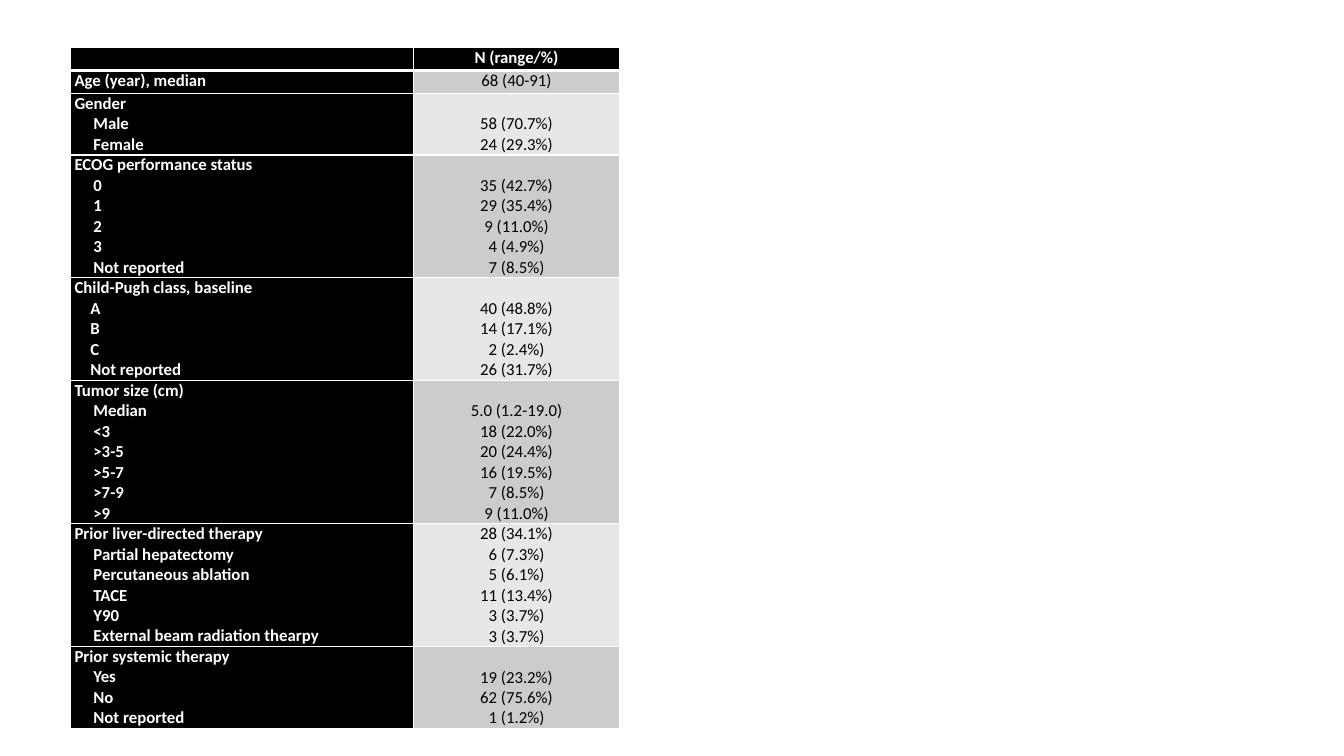
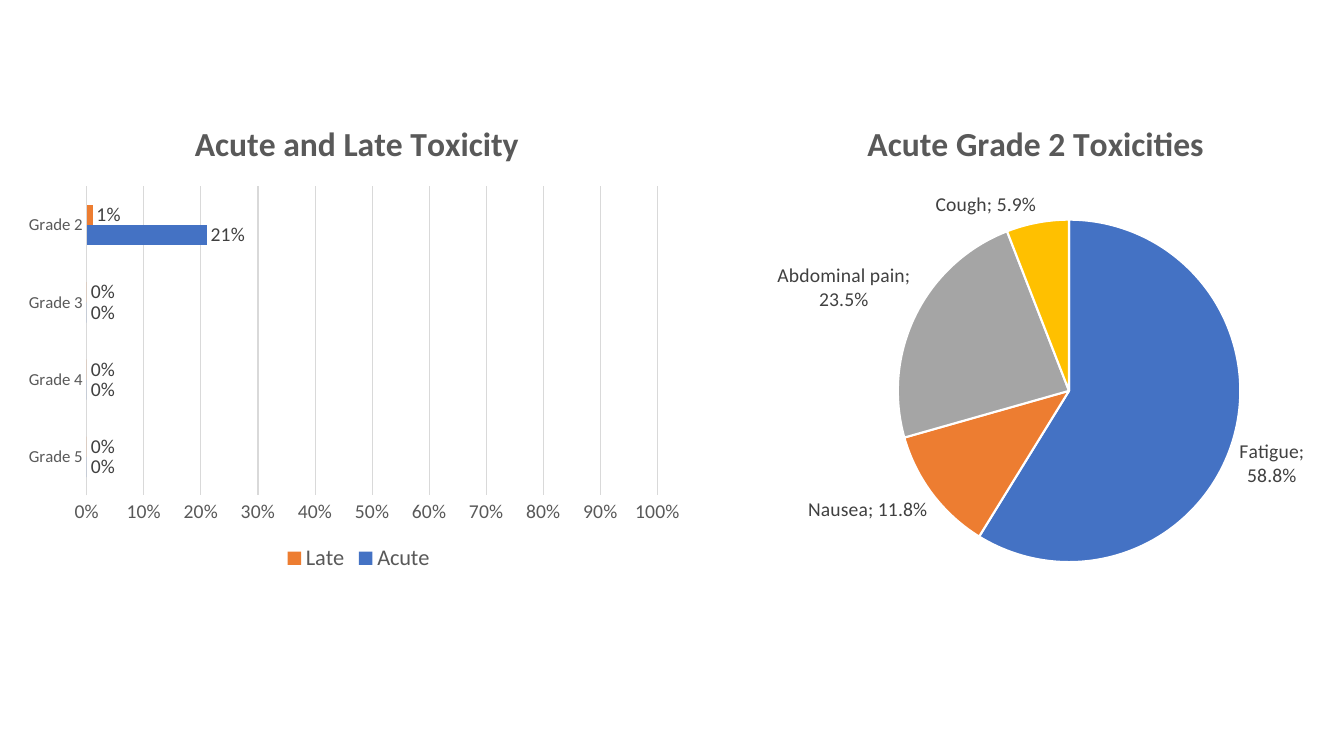
from pptx import Presentation
from pptx import util as u
from pptx.chart.data import CategoryChartData
from pptx.dml.color import RGBColor
from pptx.enum import chart as ch
from pptx.enum import text
from pptx.oxml import parse_xml
from pptx.oxml.ns import nsdecls

FONT = "Calibri"
BLACK, WHITE = "000000", "FFFFFF"
BANDS = ["CCCCCC", "E7E7E7"]
GREY, DARK_GREY, GRID = "595959", "404040", "D9D9D9"
BLUE, ORANGE, SILVER, GOLD = "4472C4", "ED7D31", "A5A5A5", "FFC000"

LINE_HEIGHT = 19.5  # px taken by one 12 pt line
MIN_ROW = 22
INDENT, SMALL_INDENT = 18, 15

# Heading, its value, indent of the sub-rows, sub-rows with their values
PATIENT_GROUPS = [
    ("Age (year), median", "68 (40-91)", 0, []),
    ("Gender", "", INDENT, [("Male", "58 (70.7%)"), ("Female", "24 (29.3%)")]),
    ("ECOG performance status", "", INDENT, [
        ("0", "35 (42.7%)"), ("1", "29 (35.4%)"), ("2", "9 (11.0%)"),
        ("3", "4 (4.9%)"), ("Not reported", "7 (8.5%)")]),
    ("Child-Pugh class, baseline", "", SMALL_INDENT, [
        ("A", "40 (48.8%)"), ("B", "14 (17.1%)"), ("C", "2 (2.4%)"),
        ("Not reported", "26 (31.7%)")]),
    ("Tumor size (cm)", "", INDENT, [
        ("Median", "5.0 (1.2-19.0)"), ("<3", "18 (22.0%)"),
        (">3-5", "20 (24.4%)"), (">5-7", "16 (19.5%)"),
        (">7-9", "7 (8.5%)"), (">9", "9 (11.0%)")]),
    ("Prior liver-directed therapy", "28 (34.1%)", INDENT, [
        ("Partial hepatectomy", "6 (7.3%)"),
        ("Percutaneous ablation", "5 (6.1%)"), ("TACE", "11 (13.4%)"),
        ("Y90", "3 (3.7%)"), ("External beam radiation thearpy", "3 (3.7%)")]),
    ("Prior systemic therapy", "", INDENT, [
        ("Yes", "19 (23.2%)"), ("No", "62 (75.6%)"),
        ("Not reported", "1 (1.2%)")]),
]


def px(length):
    return u.Emu(round(length * 9525))


def rgb(hex_color):
    return RGBColor.from_string(hex_color)


def style_font(font, size, color, bold=False):
    font.name, font.size, font.bold = FONT, u.Pt(size), bold
    font.color.rgb = rgb(color)


def style_line(line, color, width):
    line.color.rgb = rgb(color)
    line.width = u.Pt(width)


def write_lines(frame, lines, size, color, bold=False):
    for number, line in enumerate(lines):
        paragraph = frame.add_paragraph() if number else frame.paragraphs[0]
        run = paragraph.add_run()
        run.text = line
        style_font(run.font, size, color, bold)


# Table parts

def add_borders(cell, bottom):
    properties = cell._tc.get_or_add_tcPr()
    for side, width in (("L", 1), ("R", 1), ("T", 1), ("B", bottom)):
        properties.append(parse_xml(
            f'<a:ln{side} {nsdecls("a")} w="{u.Pt(width)}"><a:solidFill>'
            f'<a:srgbClr val="{WHITE}"/></a:solidFill></a:ln{side}>'))


def fill_cell(cell, lines, fill, color, bold, centred=False, indent=0, bottom=1):
    add_borders(cell, bottom)
    cell.fill.solid()
    cell.fill.fore_color.rgb = rgb(fill)
    cell.margin_left = cell.margin_right = px(4)
    cell.margin_top = cell.margin_bottom = 0
    write_lines(cell.text_frame, lines, 12, color, bold)
    paragraphs = cell.text_frame.paragraphs
    for paragraph in paragraphs:
        paragraph.alignment = text.PP_ALIGN.CENTER if centred else text.PP_ALIGN.LEFT
    if indent:
        for paragraph in paragraphs[1:]:
            paragraph._p.get_or_add_pPr().set("marL", str(px(indent)))
    if not lines:  # keeps the empty cell as low as its row
        paragraphs[0]._p.append(
            parse_xml(f'<a:endParaRPr {nsdecls("a")} sz="1200"/>'))


def add_patient_table(slide):
    heights = [MIN_ROW] + [max(MIN_ROW, LINE_HEIGHT * (1 + len(group[3])))
                           for group in PATIENT_GROUPS]
    widths = [327, 196]
    table = slide.shapes.add_table(
        len(heights), 2, px(67), px(45), px(sum(widths)), px(sum(heights))).table
    table.horz_banding = False
    for column, width in zip(table.columns, widths):
        column.width = px(width)
    for row, height in zip(table.rows, heights):
        row.height = px(height)

    fill_cell(table.cell(0, 0), [], BLACK, WHITE, True, bottom=3)
    fill_cell(table.cell(0, 1), ["N (range/%)"], BLACK, WHITE, True, True, bottom=3)
    for number, (heading, total, indent, details) in enumerate(PATIENT_GROUPS):
        labels = [heading] + [label for label, _ in details]
        values = [total] * bool(total) + [value for _, value in details]
        label_cell, value_cell = table.rows[number + 1].cells
        fill_cell(label_cell, labels, BLACK, WHITE, True, indent=indent)
        fill_cell(value_cell, values, BANDS[number % 2], BLACK, False, True)
        if details:  # values line up with the sub-rows
            value_cell.vertical_anchor = text.MSO_ANCHOR.BOTTOM


# Chart parts

def set_layout(part, index, target="", **fractions):
    for old in part.xpath("c:layout"):
        part.remove(old)
    inner = f'<c:layoutTarget val="{target}"/>' if target else ""
    modes = "".join(f'<c:{key}Mode val="edge"/>' for key in "xy")
    sizes = "".join(f'<c:{key} val="{value}"/>' for key, value in fractions.items())
    part.insert(index, parse_xml(
        f'<c:layout {nsdecls("c")}><c:manualLayout>{inner}{modes}{sizes}'
        '</c:manualLayout></c:layout>'))


def add_chart(slide, kind, box, title, title_left, plot_box, categories, series):
    data = CategoryChartData()
    data.categories = categories
    for name, values in series:
        data.add_series(name, values)
    chart = slide.shapes.add_chart(kind, *map(px, box), data).chart
    style_font(chart.font, 10, BLACK)
    chart.has_title = True
    write_lines(chart.chart_title.text_frame, [title], 24, GREY, True)
    set_layout(chart.element.xpath("c:chart/c:title")[0], 1, x=title_left, y=0.03)
    set_layout(chart.element.xpath("c:chart/c:plotArea")[0], 0, "inner",
               **dict(zip("xywh", plot_box)))
    chart.has_legend = False
    return chart


def label_series(series, number_format, with_category=False):
    labels = series.data_labels
    style_font(labels.font, 14, DARK_GREY)
    labels.number_format = number_format
    labels.number_format_is_linked = False
    labels.show_value = True
    labels.show_category_name = with_category
    labels.position = ch.XL_LABEL_POSITION.OUTSIDE_END


def style_axis(axis, size):
    style_font(axis.tick_labels.font, size, GREY)
    axis.major_tick_mark = axis.minor_tick_mark = ch.XL_TICK_MARK.NONE


def add_toxicity_bars(slide):
    chart = add_chart(
        slide, ch.XL_CHART_TYPE.BAR_CLUSTERED, (18, 96, 647, 453),
        "Acute and Late Toxicity", 0.25, (0.1, 0.18, 0.84, 0.65),
        ["Grade 5", "Grade 4", "Grade 3", "Grade 2"],
        [("Acute", (0, 0, 0, 0.21)), ("Late", (0, 0, 0, 0.01))])
    bars = chart.plots[0]
    bars.gap_width, bars.overlap = 182, 0
    bars.vary_by_categories = False
    for series, color in zip(bars.series, (BLUE, ORANGE)):
        series.format.fill.solid()
        series.format.fill.fore_color.rgb = rgb(color)
        label_series(series, "0%")

    grades, share = chart.category_axis, chart.value_axis
    style_axis(grades, 12)
    style_line(grades.format.line, GRID, 0.75)
    style_axis(share, 14)
    share.format.line.fill.background()
    share.minimum_scale, share.maximum_scale, share.major_unit = 0, 1, 0.1
    share.tick_labels.number_format = "0%"
    share.tick_labels.number_format_is_linked = False
    share.has_major_gridlines = True
    style_line(share.major_gridlines.format.line, GRID, 0.75)

    chart.has_legend = True
    chart.legend.position = ch.XL_LEGEND_POSITION.BOTTOM
    chart.legend.include_in_layout = False
    style_font(chart.legend.font, 16, GREY)


def add_grade_2_pie(slide):
    chart = add_chart(
        slide, ch.XL_CHART_TYPE.PIE, (640, 96, 694, 453),
        "Acute Grade 2 Toxicities", 0.26, (0.31, 0.25, 0.47, 0.72),
        ["Fatigue", "Nausea", "Abdominal pain", "Cough"],
        [("Series 1", (0.588, 0.118, 0.235, 0.059))])
    chart.plots[0].vary_by_categories = True
    toxicities = chart.plots[0].series[0]
    for number, color in enumerate((BLUE, ORANGE, SILVER, GOLD)):
        wedge = toxicities.points[number].format
        wedge.fill.solid()
        wedge.fill.fore_color.rgb = rgb(color)
        style_line(wedge.line, WHITE, 1.5)
    label_series(toxicities, "0.0%", with_category=True)
    # Two lines keep this label inside the slide
    fatigue_label = toxicities.points[0].data_label
    write_lines(fatigue_label.text_frame, ["Fatigue;", "58.8%"], 14, DARK_GREY)
    fatigue_label.position = ch.XL_LABEL_POSITION.OUTSIDE_END


def main():
    deck = Presentation()
    deck.slide_width, deck.slide_height = px(1280), px(720)
    blank = deck.slide_layouts[6]

    # Patient characteristics
    add_patient_table(deck.slides.add_slide(blank))

    # Toxicity charts
    toxicity = deck.slides.add_slide(blank)
    add_toxicity_bars(toxicity)
    add_grade_2_pie(toxicity)

    deck.save("out.pptx")


if __name__ == "__main__":
    main()
